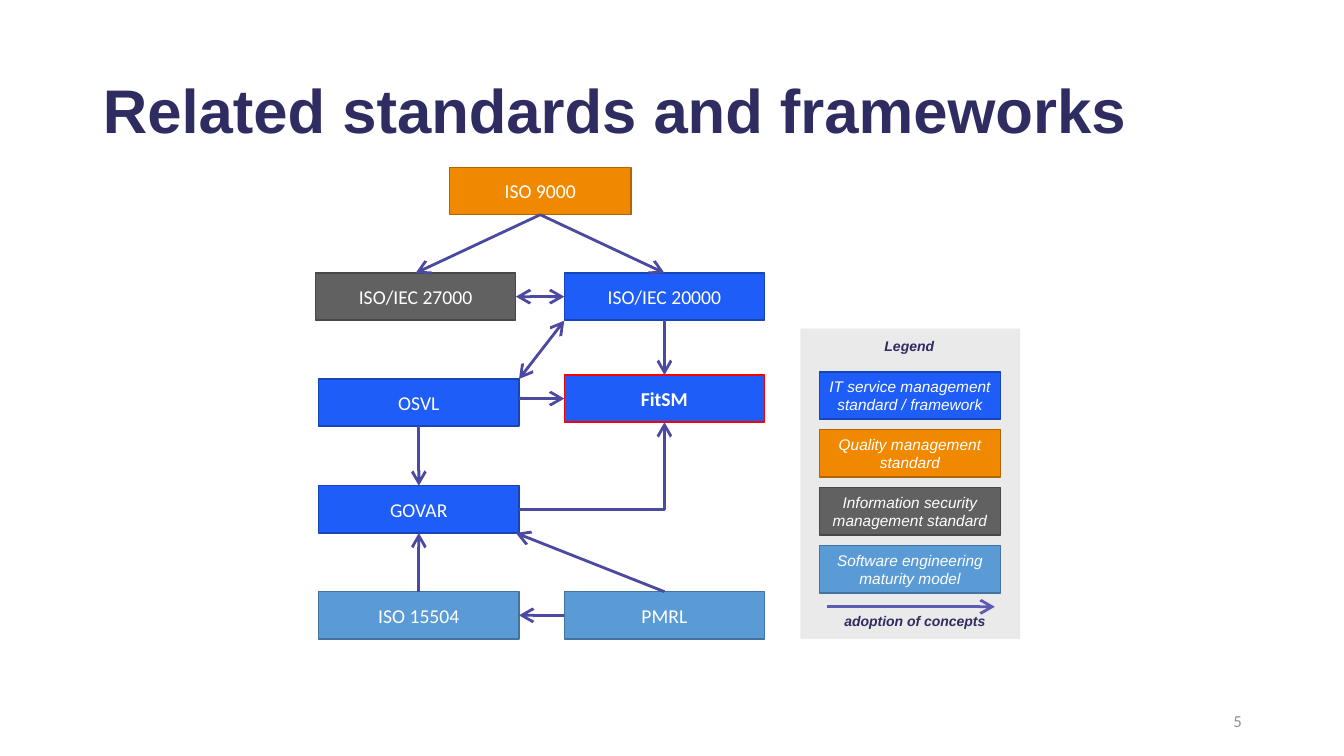
from copy import deepcopy
from dataclasses import dataclass

from lxml import etree
from pptx import Presentation
from pptx import util as u
from pptx.dml.color import RGBColor
from pptx.enum import shapes, text
from pptx.oxml.ns import qn


@dataclass(frozen=True)
class Theme:
    ink: str = "2E2C61"
    arrow: str = "4C49A0"
    legend_arrow: str = "5D5AB4"
    white: str = "FFFFFF"
    muted: str = "8F8F9E"
    panel: str = "EAEAEA"
    highlight: str = "FF0000"
    service: tuple = ("1E5DF8", "1645B7")
    quality: tuple = ("F08900", "B26500")
    security: tuple = ("616161", "484848")
    software: tuple = ("5B9BD5", "43739E")
    heading: str = "Arial"
    body: str = "Calibri"
    title_size: int = 44
    node_size: int = 14
    number_size: int = 12
    key_size: int = 11
    caption_size: int = 10


T = Theme()
NODE_W, NODE_H, KEY_W = 5.05, 1.19, 4.57
TOP, LEFT, BOTTOM, RIGHT = range(4)
INSETS = dict(margin_left=u.Cm(0.18), margin_right=u.Cm(0.18),
              margin_top=u.Cm(0.1), margin_bottom=u.Cm(0.1))

NODES = [
    ("ISO 9000", 11.33, 4.22, KEY_W, T.quality),
    ("ISO/IEC 27000", 7.95, 6.88, NODE_W, T.security),
    ("ISO/IEC 20000", 14.22, 6.88, NODE_W, T.service),
    ("OSVL", 8.03, 9.55, NODE_W, T.service),
    ("FitSM", 14.22, 9.45, NODE_W, (T.service[0], T.highlight)),
    ("GOVAR", 8.03, 12.24, NODE_W, T.service),
    ("ISO 15504", 8.03, 14.91, NODE_W, T.software),
    ("PMRL", 14.22, 14.91, NODE_W, T.software),
]
ARROWS = [
    (("ISO 9000", BOTTOM), ("ISO/IEC 27000", TOP), False),
    (("ISO 9000", BOTTOM), ("ISO/IEC 20000", TOP), False),
    (("ISO/IEC 27000", RIGHT), ("ISO/IEC 20000", LEFT), True),
    ((13.08, 9.55), (14.22, 8.08), True),
    (("ISO/IEC 20000", BOTTOM), ("FitSM", TOP), False),
    ((13.08, 10.04), ("FitSM", LEFT), False),
    (("OSVL", BOTTOM), ("GOVAR", TOP), False),
    (("ISO 15504", TOP), ("GOVAR", BOTTOM), False),
    (("PMRL", TOP), (13, 13.43), False),
    (("PMRL", LEFT), ("ISO 15504", RIGHT), False),
]
KEYS = [
    ("IT service management\vstandard / framework", T.service),
    ("Quality management\nstandard", T.quality),
    ("Information security\vmanagement standard", T.security),
    ("Software engineering\vmaturity model", T.software),
]


def apply(target, values):
    for name, value in values.items():
        setattr(target, name, value)


def box_at(x, y, w, h):
    return dict(left=u.Cm(x), top=u.Cm(y), width=u.Cm(w), height=u.Cm(h))


def write(sp, words, size, color, font, align="CENTER", spacing=None,
          frame=None, **style):
    tf = sp.text_frame
    tf.text = words
    apply(tf, dict(word_wrap=True, auto_size=text.MSO_AUTO_SIZE.NONE,
                   vertical_anchor=text.MSO_ANCHOR.MIDDLE) | (frame or {}))
    for p in tf.paragraphs:
        apply(p, dict(alignment=text.PP_ALIGN[align], line_spacing=spacing))
        for r in p.runs:
            apply(r.font, dict(size=u.Pt(size), name=font) | style)
            r.font.color.rgb = RGBColor.from_string(color)
        for br in p._p.findall(qn("a:br")):
            br.insert(0, deepcopy(p.runs[0]._r.rPr))


def add_box(s, x, y, w, h, fill, outline=None):
    sp = s.shapes.add_shape(shapes.MSO_SHAPE.RECTANGLE, **box_at(x, y, w, h))
    sp.shadow.inherit = False
    sp.fill.solid()
    sp.fill.fore_color.rgb = RGBColor.from_string(fill)
    if outline:
        sp.line.color.rgb = RGBColor.from_string(outline)
        sp.line.width = u.Pt(1)
    else:
        sp.line.fill.background()
    return sp


def add_caption(s, words, x, y, w):
    sp = s.shapes.add_textbox(**box_at(x, y, w, 0.64))
    frame = INSETS | dict(vertical_anchor=text.MSO_ANCHOR.TOP)
    write(sp, words, T.caption_size, T.ink, T.heading, frame=frame,
          bold=True, italic=True)


def add_arrow(s, start, end, nodes, both=False, bent=False, color=T.arrow):
    points = [(0, 0) if isinstance(e[0], str) else e for e in (start, end)]
    kind = shapes.MSO_CONNECTOR.ELBOW if bent else shapes.MSO_CONNECTOR.STRAIGHT
    c = s.shapes.add_connector(kind, *[u.Cm(v) for point in points for v in point])
    for join, (name, site) in ((c.begin_connect, start), (c.end_connect, end)):
        if isinstance(name, str):
            join(nodes[name], site)
    if bent:
        c._element.spPr.find(qn("a:prstGeom")).set("prst", "bentConnector2")
    c.line.color.rgb = RGBColor.from_string(color)
    c.line.width = u.Pt(2)
    ln = c.line._get_or_add_ln()
    for tag in ("a:headEnd", "a:tailEnd") if both else ("a:tailEnd",):
        etree.SubElement(ln, qn(tag), type="arrow", w="lg", len="lg")
    etree.SubElement(c._element.spPr, qn("a:effectLst"))


def add_legend(s):
    add_box(s, 20.17, 8.28, 5.54, 7.82, T.panel)
    add_caption(s, "Legend", 20.4, 8.41, 5.03)
    for i, (words, (fill, outline)) in enumerate(KEYS):
        sp = add_box(s, 20.65, 9.37 + 1.46 * i, KEY_W, NODE_H, fill, outline)
        write(sp, words, T.key_size, T.white, T.heading,
              frame=INSETS | dict(word_wrap=False), italic=True)
    add_arrow(s, (20.85, 15.29), (25.07, 15.29), {}, color=T.legend_arrow)
    add_caption(s, "adoption of concepts", 20.17, 15.34, 5.77)


def add_diagram(s):
    nodes = {}
    for name, x, y, w, (fill, outline) in NODES:
        nodes[name] = add_box(s, x, y, w, NODE_H, fill, outline)
        write(nodes[name], name, T.node_size, T.white, T.body,
              frame=INSETS | dict(word_wrap=False), bold=name == "FitSM")
    for start, end, both in ARROWS:
        add_arrow(s, start, end, nodes, both)
    add_arrow(s, ("GOVAR", RIGHT), ("FitSM", BOTTOM), nodes, bent=True)


def main():
    prs = Presentation()
    apply(prs, dict(slide_width=u.Cm(33.87), slide_height=u.Cm(19.05)))
    s = prs.slides.add_slide(prs.slide_layouts[5])
    title = s.shapes.title
    apply(title, box_at(2.34, 1.02, 29.21, 3.68))
    write(title, "Related standards and frameworks", T.title_size, T.ink,
          T.heading, align="LEFT", spacing=0.9, bold=True)
    add_legend(s)
    add_diagram(s)
    number = s.shapes.add_textbox(**box_at(23.93, 17.65, 7.62, 1.02))
    write(number, "5", T.number_size, T.muted, T.body, align="RIGHT")
    prs.save("out.pptx")


if __name__ == "__main__":
    main()
